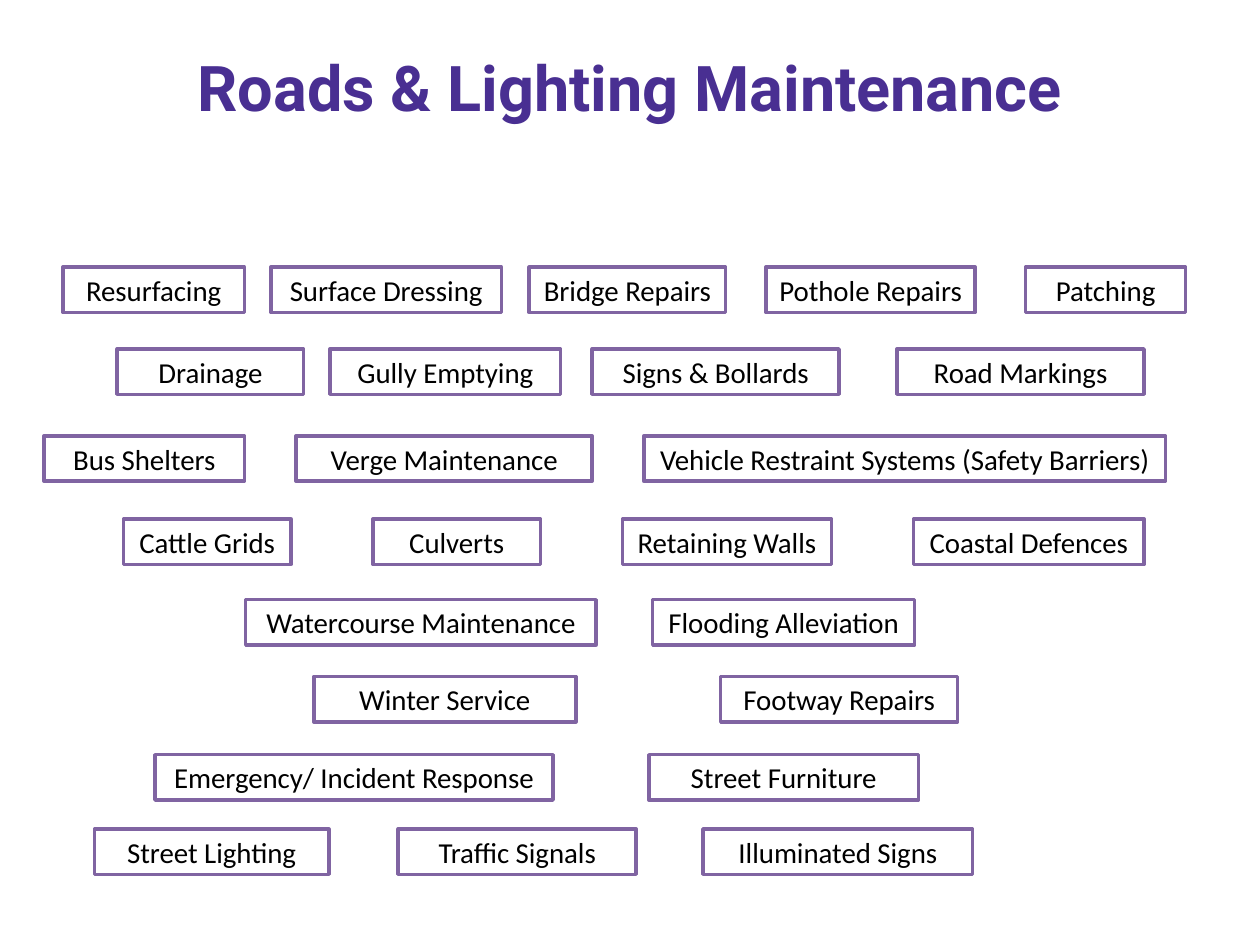
from pptx import Presentation
from pptx.dml.color import RGBColor
from pptx.enum.shapes import MSO_SHAPE as Shape
from pptx.enum.text import MSO_ANCHOR as Anchor, PP_ALIGN as Align
from pptx.util import Inches, Pt

COLUMNS, ROWS = 100, 75
BOX_ROWS = 3.6

# Each row: top in grid rows, then (service, left, width) in grid columns
SERVICE_ROWS = [
    (21.2, [("Resurfacing", 5, 14.4), ("Surface Dressing", 21.5, 18.3),
            ("Bridge Repairs", 42, 15.6), ("Pothole Repairs", 60.8, 16.6),
            ("Patching", 81.4, 12.7)]),
    (27.7, [("Drainage", 9.3, 14.8), ("Gully Emptying", 26.2, 18.3),
            ("Signs & Bollards", 47, 19.6), ("Road Markings", 71.2, 19.6)]),
    (34.6, [("Bus Shelters", 3.5, 15.9), ("Verge Maintenance", 23.5, 23.5),
            ("Vehicle Restraint Systems (Safety Barriers)", 51.1, 41.4)]),
    (41.2, [("Cattle Grids", 9.8, 13.3), ("Culverts", 29.6, 13.3),
            ("Retaining Walls", 49.4, 16.6), ("Coastal Defences", 72.5, 18.3)]),
    (47.6, [("Watercourse Maintenance", 19.5, 27.8),
            ("Flooding Alleviation", 51.8, 20.8)]),
    (53.7, [("Winter Service", 24.9, 20.8), ("Footway Repairs", 57.2, 18.8)]),
    (59.9, [("Emergency/ Incident Response", 12.3, 31.6),
            ("Street Furniture", 51.5, 21.4)]),
    (65.8, [("Street Lighting", 7.5, 18.6), ("Traffic Signals", 31.6, 18.9),
            ("Illuminated Signs", 55.8, 21.4)]),
]


def colour(value):
    return RGBColor.from_string(value)


def write_centred(shape, text, font, size, ink, bold=False):
    frame = shape.text_frame
    frame.vertical_anchor = Anchor.MIDDLE
    para = frame.paragraphs[0]
    para.alignment = Align.CENTER
    span = para.add_run()
    span.text = text
    span.font.name = font
    span.font.size = Pt(size)
    span.font.bold = bold
    span.font.color.rgb = colour(ink)


def place_title(page, text, left, top, width, height):
    title = page.shapes.title
    title.left, title.top, title.width, title.height = left, top, width, height
    write_centred(title, text, "Roboto", 36, "492F92", bold=True)


def place_service(page, text, left, top, width, height):
    box = page.shapes.add_shape(Shape.RECTANGLE, left, top, width, height)
    box.shadow.inherit = False
    box.fill.solid()
    box.fill.fore_color.rgb = colour("FFFFFF")
    box.line.color.rgb = colour("8064A2")
    box.line.width = Pt(2)
    box.text_frame.word_wrap = False
    write_centred(box, text, "Calibri", 16.5, "000000")


def place_service_row(page, services, top, height, column):
    for text, left, width in services:
        place_service(page, text, int(left * column), top, int(width * column), height)


def main():
    deck = Presentation()
    deck.slide_width, deck.slide_height = Inches(10), Inches(7.5)
    column, row = deck.slide_width / COLUMNS, deck.slide_height / ROWS
    page = deck.slides.add_slide(deck.slide_layouts[5])
    place_title(page, "Roads & Lighting Maintenance",
                int(5 * column), int(3 * row), int(90 * column), int(7.7 * row))
    for top, services in SERVICE_ROWS:
        place_service_row(page, services, int(top * row), int(BOX_ROWS * row), column)
    deck.save("out.pptx")


if __name__ == "__main__":
    main()
